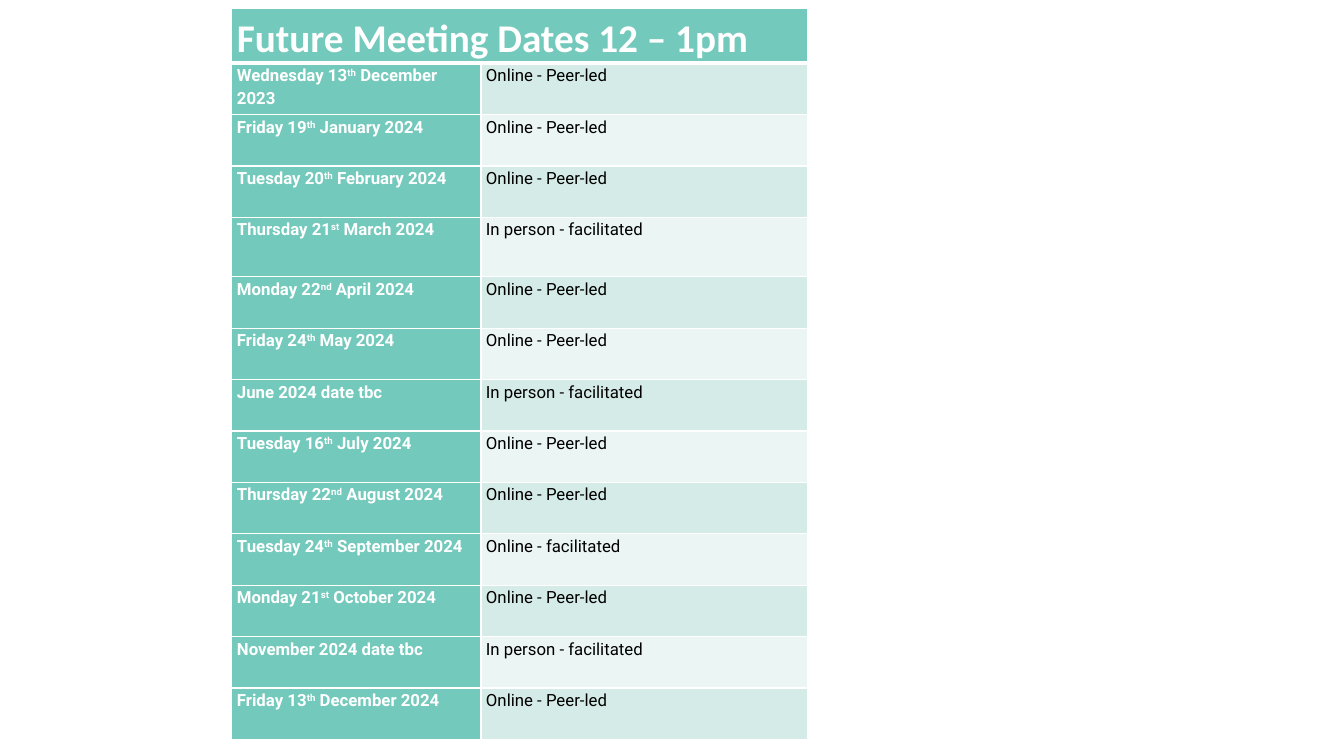
"""Build a slide with a table of future meeting dates."""
from lxml import etree
from pptx import Presentation
from pptx.dml.color import RGBColor
from pptx.oxml.ns import qn
from pptx.util import Inches, Pt

COLORS = {
    "teal": "73C9BB",
    "band_dark": "D5EBE7",
    "band_light": "EBF5F3",
    "white": "FFFFFF",
    "black": "000000",
}
TITLE = "Future Meeting Dates 12 – 1pm"
PEER_ONLINE = "Online - Peer-led"
IN_PERSON = "In person - facilitated"
MEETINGS = [
    (("Wednesday 13", "th", " December 2023"), PEER_ONLINE),
    (("Friday 19", "th", " January 2024"), PEER_ONLINE),
    (("Tuesday 20", "th", " February 2024"), PEER_ONLINE),
    (("Thursday 21", "st", " March 2024"), IN_PERSON),
    (("Monday 22", "nd", " April 2024"), PEER_ONLINE),
    (("Friday 24", "th", " May 2024"), PEER_ONLINE),
    (("June 2024 date tbc",), IN_PERSON),
    (("Tuesday 16", "th", " July 2024"), PEER_ONLINE),
    (("Thursday 22", "nd", " August 2024"), PEER_ONLINE),
    (("Tuesday 24", "th", " September 2024"), "Online - facilitated"),
    (("Monday 21", "st", " October 2024"), PEER_ONLINE),
    (("November 2024 date tbc",), IN_PERSON),
    (("Friday 13", "th", " December 2024"), PEER_ONLINE),
]
COLUMN_WIDTHS = (2.47, 3.24)
HEADER_HEIGHT = 0.44
ROW_HEIGHT = 0.51
TALL_ROW, TALL_HEIGHT = 4, 0.59


def set_borders(cell, top=1, bottom=1):
    """Draw white borders, with widths in points."""
    properties = cell._tc.get_or_add_tcPr()
    for side, width in (("L", 1), ("R", 1), ("T", top), ("B", bottom)):
        line = etree.SubElement(properties, qn(f"a:ln{side}"), w=str(Pt(width)))
        fill = etree.SubElement(line, qn("a:solidFill"))
        etree.SubElement(fill, qn("a:srgbClr"), val=COLORS["white"])


def style_cell(cell, fill, top=1, bottom=1):
    """Set the borders, fill and margins of a cell."""
    set_borders(cell, top, bottom)
    cell.fill.solid()
    cell.fill.fore_color.rgb = RGBColor.from_string(COLORS[fill])
    cell.margin_left = cell.margin_right = Inches(0.05)
    cell.margin_top = cell.margin_bottom = 0


def write_cell(cell, parts, color, bold, size=12, font="Roboto"):
    """Write text parts run by run, the second one as superscript."""
    paragraph = cell.text_frame.paragraphs[0]
    paragraph.line_spacing = 1.15
    paragraph.space_after = Pt(10)
    for index, part in enumerate(parts):
        run = paragraph.add_run()
        run.text = part
        run.font.name = font
        run.font.size = Pt(size)
        run.font.bold = bold
        run.font.color.rgb = RGBColor.from_string(COLORS[color])
        if index == 1:
            run._r.get_or_add_rPr().set("baseline", "30000")


def add_header(table):
    """Fill the merged title row."""
    for cell in table.rows[0].cells:
        style_cell(cell, "teal", bottom=3)
    title_cell = table.cell(0, 0)
    title_cell.merge(table.cell(0, 1))
    write_cell(title_cell, (TITLE,), "white", True, 28, "Calibri")


def add_meeting(table, row, date_parts, meeting_format):
    """Fill one row with a date and its meeting format."""
    top = 3 if row == 1 else 1
    band = "band_dark" if row % 2 else "band_light"
    date_cell, format_cell = table.rows[row].cells
    style_cell(date_cell, "teal", top)
    style_cell(format_cell, band, top)
    write_cell(date_cell, date_parts, "white", True)
    write_cell(format_cell, (meeting_format,), "black", False)


def add_meeting_table(slide):
    """Add the table of meeting dates."""
    heights = [HEADER_HEIGHT] + [ROW_HEIGHT] * len(MEETINGS)
    heights[TALL_ROW] = TALL_HEIGHT
    table = slide.shapes.add_table(
        len(heights), len(COLUMN_WIDTHS), Inches(2.3), Inches(0.08),
        Inches(sum(COLUMN_WIDTHS)), Inches(sum(heights))).table
    for column, width in zip(table.columns, COLUMN_WIDTHS):
        column.width = Inches(width)
    for row, height in zip(table.rows, heights):
        row.height = Inches(height)
    add_header(table)
    for row, (date_parts, meeting_format) in enumerate(MEETINGS, start=1):
        add_meeting(table, row, date_parts, meeting_format)


def main():
    """Create and save the presentation."""
    presentation = Presentation()
    presentation.slide_width = Inches(13.33)
    presentation.slide_height = Inches(7.5)
    slide = presentation.slides.add_slide(presentation.slide_layouts[6])
    add_meeting_table(slide)
    presentation.save("out.pptx")


if __name__ == "__main__":
    main()
